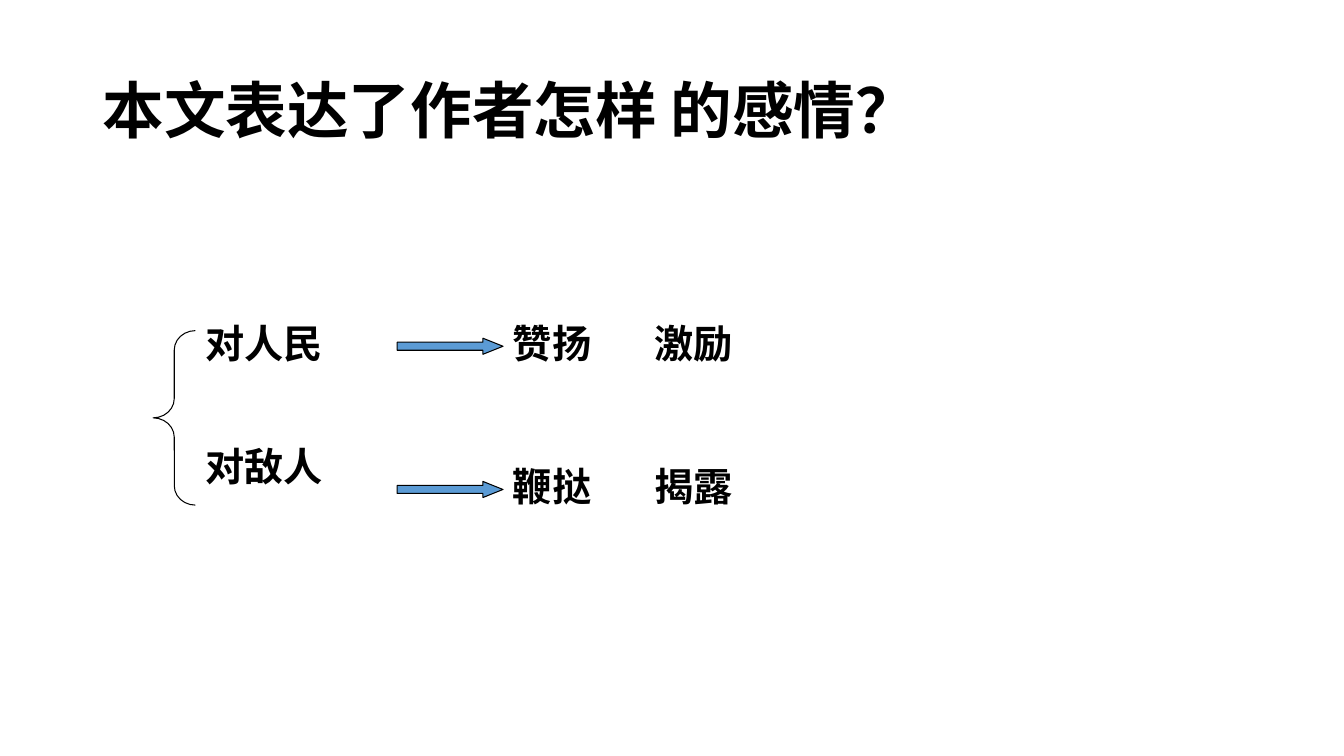
from lxml import etree
from pptx import Presentation
from pptx.dml import color
from pptx.enum import shapes, text
from pptx.oxml import ns
from pptx.util import Pt

FONT = "Calibri"
BLACK = "000000"
BLUE = "5B9BD5"


def rgb(value):
    return color.RGBColor.from_string(value)


def place(shape, left, top, width, height):
    shape.left, shape.top = Pt(left), Pt(top)
    shape.width, shape.height = Pt(width), Pt(height)


def style(paragraph, size):
    paragraph.alignment = text.PP_ALIGN.LEFT
    font = paragraph.font
    font.name, font.size, font.bold = FONT, Pt(size), True
    font.color.rgb = rgb(BLACK)


def add_tab(paragraph, position):
    tabs = etree.SubElement(paragraph._p.get_or_add_pPr(), ns.qn("a:tabLst"))
    etree.SubElement(tabs, ns.qn("a:tab"), pos=str(Pt(position)), algn="l")


def add_title(slide, wording):
    title = slide.shapes.title
    place(title, 66, 28.8, 828, 104.4)
    title.text_frame.text = wording
    title.text_frame.vertical_anchor = text.MSO_ANCHOR.MIDDLE
    heading = title.text_frame.paragraphs[0]
    heading.line_spacing = 0.9
    style(heading, 44)


def add_text(slide, lines, left, top, width, height, gap=0, tab=None):
    box = slide.shapes.add_textbox(Pt(left), Pt(top), Pt(width), Pt(height))
    frame = box.text_frame
    frame.word_wrap = True
    frame.text = "\n".join(lines)
    for index, paragraph in enumerate(frame.paragraphs):
        if tab:
            add_tab(paragraph, tab)
        if index:
            paragraph.space_before = Pt(gap)
        style(paragraph, 28)


def add_outlined(slide, kind, left, top, width, height, adjustments, fill=None):
    shape = slide.shapes.add_shape(kind, Pt(left), Pt(top), Pt(width), Pt(height))
    shape.shadow.inherit = False
    for index, value in enumerate(adjustments):
        shape.adjustments[index] = value
    if fill:
        shape.fill.solid()
        shape.fill.fore_color.rgb = rgb(fill)
    else:
        shape.fill.background()
    shape.line.color.rgb = rgb(BLACK)
    shape.line.width = Pt(0.75)


def main():
    deck = Presentation()
    deck.slide_width, deck.slide_height = Pt(960), Pt(540)
    slide = deck.slides.add_slide(deck.slide_layouts[5])

    add_title(slide, "本文表达了作者怎样 的感情？")

    # The two audiences, joined by a brace
    add_text(slide, ["对人民", "对敌人"], 139.7, 224.6, 196.6, 141.8, gap=54.5)
    add_outlined(slide, shapes.MSO_SHAPE.LEFT_BRACE,
                 109.4, 236.2, 30.2, 124.6, [0.457, 0.5])

    # The feelings towards each audience
    feelings = [("赞扬\t激励", 224.6, 453.6), ("鞭挞\t揭露", 326.9, 181.4)]
    for wording, top, width in feelings:
        add_text(slide, [wording], 359.3, top, width, 41, tab=101)
        add_outlined(slide, shapes.MSO_SHAPE.RIGHT_ARROW,
                     283.7, top + 17, 75.6, 11.5, [0.5, 1.245], BLUE)

    deck.save("out.pptx")


if __name__ == "__main__":
    main()
